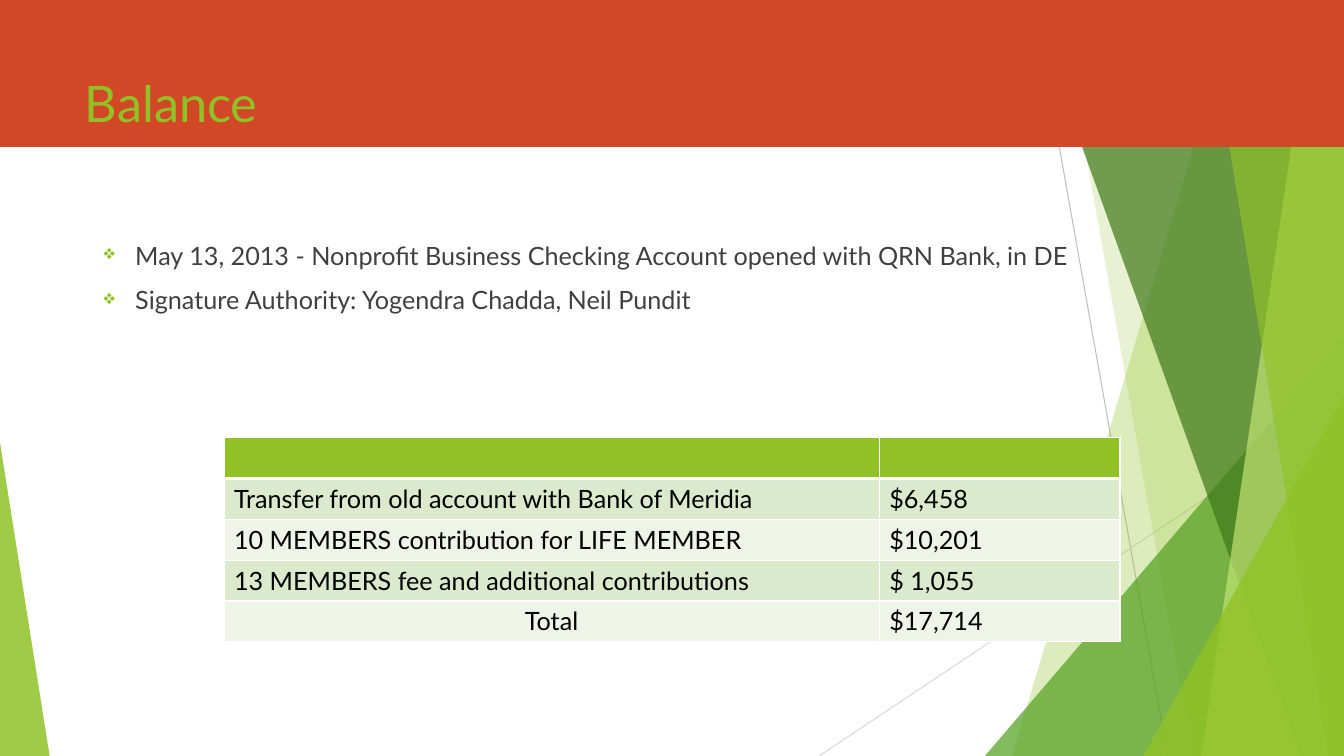
from lxml.etree import SubElement
from pptx import Presentation
from pptx.dml.color import RGBColor
from pptx.enum.shapes import MSO_CONNECTOR, MSO_SHAPE
from pptx.enum.text import MSO_ANCHOR, PP_ALIGN
from pptx.oxml import parse_xml
from pptx.oxml.ns import nsdecls, qn
from pptx.util import Pt

WIDTH, HEIGHT = 960, 540
LIME = RGBColor(0x90, 0xC2, 0x26)
PALE_LIME = RGBColor(0xC0, 0xE4, 0x74)
GREEN = RGBColor(0x54, 0xA0, 0x21)
FOREST = RGBColor(0x3F, 0x78, 0x19)
BRICK = RGBColor(0xD2, 0x47, 0x26)
MID_GRAY = RGBColor(0xBF, 0xBF, 0xBF)
LIGHT_GRAY = RGBColor(0xD9, 0xD9, 0xD9)
CHARCOAL = RGBColor(0x40, 0x40, 0x40)
BLACK = RGBColor(0, 0, 0)
WHITE = RGBColor(0xFF, 0xFF, 0xFF)
BAND_DARK = RGBColor(0xDB, 0xE9, 0xCD)
BAND_LIGHT = RGBColor(0xEE, 0xF4, 0xE8)

NOTES = [
    "May 13, 2013 - Nonprofit Business Checking Account opened with QRN Bank, in DE",
    "Signature Authority: Yogendra Chadda, Neil Pundit",
]
BALANCE = [
    ("", ""),
    ("Transfer from old account with Bank of Meridia", "$6,458"),
    ("10 MEMBERS contribution for LIFE MEMBER", "$10,201"),
    ("13 MEMBERS fee and additional contributions", "$ 1,055"),
    ("Total", "$17,714"),
]


class SlideBuilder:
    font_name = "Lato"
    body_size = 18
    title_size = 36

    def __init__(self, slide):
        self.slide = slide
        self.shapes = slide.shapes

    def style(self, paragraph, size, color):
        paragraph.font.name = self.font_name
        paragraph.font.size = Pt(size)
        paragraph.font.color.rgb = color

    def paint(self, shape, color, opacity):
        """Fill a shape without outline or shadow; opacity is in percent."""
        shape.shadow.inherit = False
        shape.line.fill.background()
        shape.fill.solid()
        shape.fill.fore_color.rgb = color
        if opacity < 100:
            solid = shape.fill._xPr.find(qn("a:solidFill"))
            SubElement(solid[0], qn("a:alpha"), val=str(opacity * 1000))

    def hairline(self, start, end, color):
        line = self.shapes.add_connector(
            MSO_CONNECTOR.STRAIGHT, *map(Pt, start + end))
        line.line.color.rgb = color
        line.line.width = Pt(0.75)
        SubElement(line._element.spPr, qn("a:effectLst"))

    def facet(self, top_x, bottom_x, color, opacity):
        """Full-height panel from a slanted left side to the right slide edge."""
        outline = self.shapes.build_freeform(Pt(top_x), Pt(-0.6), scale=1.0)
        corners = [(WIDTH, -0.6), (WIDTH, HEIGHT), (bottom_x, HEIGHT)]
        outline.add_line_segments([(Pt(x), Pt(y)) for x, y in corners])
        self.paint(outline.convert_to_shape(), color, opacity)

    def corner_triangle(self, left, top, width, apex, color, opacity):
        """Triangle on the bottom slide edge; apex 0 is left, 1 is right."""
        triangle = self.shapes.add_shape(
            MSO_SHAPE.ISOSCELES_TRIANGLE,
            Pt(left), Pt(top), Pt(width), Pt(HEIGHT - top))
        triangle.adjustments[0] = apex
        self.paint(triangle, color, opacity)

    def banner(self, height, color):
        band = self.shapes.add_shape(
            MSO_SHAPE.RECTANGLE, 0, 0, Pt(WIDTH), Pt(height))
        self.paint(band, color, 100)

    def title(self, text, left, top, width, height):
        heading = self.shapes.title
        heading.left, heading.top = Pt(left), Pt(top)
        heading.width, heading.height = Pt(width), Pt(height)
        # Bring the heading in front of the banner.
        self.shapes._spTree.append(heading._element)
        frame = heading.text_frame
        frame.text = text
        frame.vertical_anchor = MSO_ANCHOR.TOP
        frame.paragraphs[0].alignment = PP_ALIGN.LEFT
        self.style(frame.paragraphs[0], self.title_size, LIME)

    def bullets(self, items, left, top, width, height):
        frame = self.shapes.add_textbox(
            Pt(left), Pt(top), Pt(width), Pt(height)).text_frame
        frame.word_wrap = True
        frame.margin_top = Pt(35.5)
        for index, item in enumerate(items):
            paragraph = frame.paragraphs[0] if index == 0 else frame.add_paragraph()
            paragraph.text = item
            paragraph.space_before = Pt(10 if index else 0)
            self.style(paragraph, self.body_size, CHARCOAL)
            props = paragraph._p.get_or_add_pPr()
            props.set("marL", str(Pt(22.5)))
            props.set("indent", str(-Pt(22.5)))
            color = SubElement(props, qn("a:buClr"))
            SubElement(color, qn("a:srgbClr"), val=str(LIME))
            SubElement(props, qn("a:buSzPct"), val="80000")
            SubElement(props, qn("a:buChar"), char="❖")
            # The schema wants the default run style after the bullet.
            props.append(props.find(qn("a:defRPr")))

    def cell_borders(self, cell, top, bottom):
        props = cell._tc.get_or_add_tcPr()
        widths = {"lnL": 1, "lnR": 1, "lnT": top, "lnB": bottom}
        for index, (side, width) in enumerate(widths.items()):
            props.insert(index, parse_xml(
                f'<a:{side} {nsdecls("a")} w="{Pt(width)}"><a:solidFill>'
                f'<a:srgbClr val="{WHITE}"/></a:solidFill></a:{side}>'))

    def table(self, rows, left, top, column_widths, row_height):
        grid = self.shapes.add_table(
            len(rows), len(column_widths), Pt(left), Pt(top),
            Pt(sum(column_widths)), Pt(row_height * len(rows))).table
        for column, width in zip(grid.columns, column_widths):
            column.width = Pt(width)
        for r, row in enumerate(rows):
            grid.rows[r].height = Pt(row_height)
            for c, text in enumerate(row):
                cell = grid.cell(r, c)
                cell.text = text
                paragraph = cell.text_frame.paragraphs[0]
                self.style(paragraph, self.body_size, BLACK)
                if text == "Total":
                    paragraph.alignment = PP_ALIGN.CENTER
                cell.fill.solid()
                band = BAND_DARK if r % 2 else BAND_LIGHT
                cell.fill.fore_color.rgb = band if r else LIME
                self.cell_borders(cell, 3 if r == 1 else 1, 3 if r == 0 else 1)


def main():
    deck = Presentation()
    deck.slide_width, deck.slide_height = Pt(WIDTH), Pt(HEIGHT)
    page = SlideBuilder(deck.slides.add_slide(deck.slide_layouts[5]))

    page.hairline((738, 0), (834, HEIGHT), MID_GRAY)
    page.hairline((WIDTH, 290), (585, HEIGHT), LIGHT_GRAY)
    page.facet(884, 723, LIME, 30)
    page.facet(756, 852, LIME, 20)
    page.corner_triangle(703.5, 240, 256.5, 1, GREEN, 72)
    page.facet(735, 929.5, FOREST, 70)
    page.facet(938, 858, PALE_LIME, 70)
    page.facet(861, 949, LIME, 65)
    page.corner_triangle(816.5, 283, 143.5, 1, LIME, 80)
    page.corner_triangle(0, 316, 35.5, 0, LIME, 85)
    page.banner(105, BRICK)

    page.title("Balance", 53.5, 48, 677, 104)
    page.bullets(NOTES, 67, 136, 807, 350)
    page.table(BALANCE, 160, 312.5, (468, 172), 29.2)
    deck.save("out.pptx")


if __name__ == "__main__":
    main()
